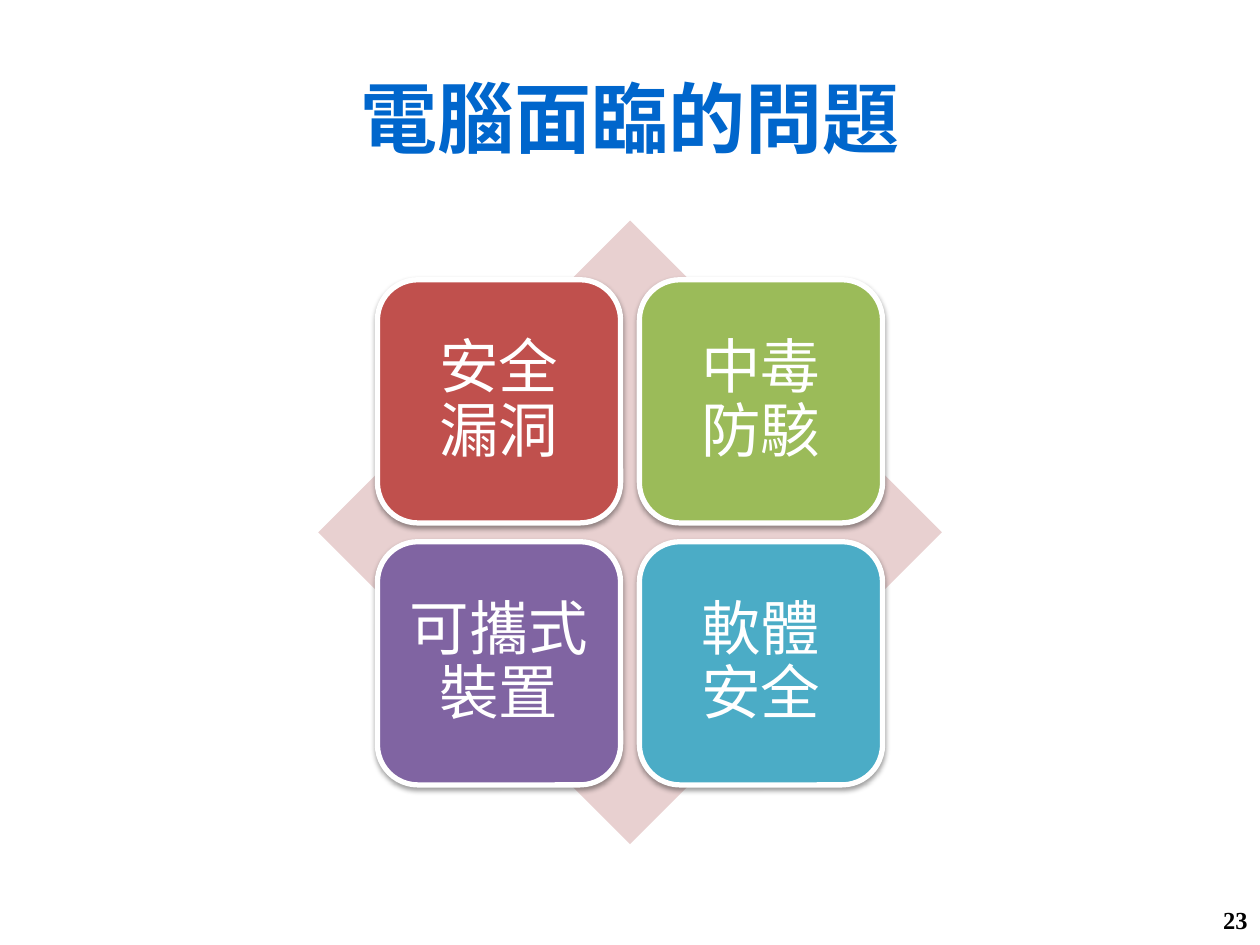
from lxml import etree
from pptx import Presentation
from pptx.dml.color import RGBColor
from pptx.enum import shapes, text
from pptx.oxml import parse_xml
from pptx.oxml.ns import nsdecls, qn
from pptx.util import Pt

FONT = "Times New Roman"
BLUE = RGBColor(0x00, 0x66, 0xCC)
PINK = RGBColor(0xE8, 0xD0, 0xD0)
RED = RGBColor(0xC0, 0x50, 0x4D)
GREEN = RGBColor(0x9B, 0xBB, 0x59)
PURPLE = RGBColor(0x80, 0x64, 0xA2)
TEAL = RGBColor(0x4B, 0xAC, 0xC6)
WHITE = RGBColor(0xFF, 0xFF, 0xFF)
BLACK = RGBColor(0x00, 0x00, 0x00)

PROBLEMS = [
    ("安全 漏洞", RED), ("中毒 防駭", GREEN),
    ("可攜式裝置", PURPLE), ("軟體 安全", TEAL),
]


def write(sp, words, size, color, align, bold=False):
    tf = sp.text_frame
    tf.word_wrap = True
    tf.vertical_anchor = text.MSO_ANCHOR.MIDDLE
    p = tf.paragraphs[0]
    p.text = words
    p.alignment = align
    p.font.name = FONT
    p.font.size = Pt(size)
    p.font.bold = bold
    p.font.color.rgb = color
    return tf


def add_filled(slide, kind, x, y, size, fill):
    sp = slide.shapes.add_shape(kind, Pt(x), Pt(y), Pt(size), Pt(size))
    sp.shadow.inherit = False
    sp.fill.solid()
    sp.fill.fore_color.rgb = fill
    sp.line.fill.background()
    return sp


def add_soft_shadow(sp):
    effects = sp.element.spPr.find(qn("a:effectLst"))
    shadow = parse_xml(
        f'<a:outerShdw {nsdecls("a")} blurRad="{Pt(3.1)}" dist="{Pt(1.6)}" '
        'dir="5400000" rotWithShape="0"/>')
    color = etree.SubElement(shadow, qn("a:srgbClr"), val=str(BLACK))
    etree.SubElement(color, qn("a:alpha"), val="38000")
    effects.append(shadow)


def add_title(slide, words, x, y, w, h):
    sp = slide.shapes.title
    sp.left, sp.top, sp.width, sp.height = Pt(x), Pt(y), Pt(w), Pt(h)
    write(sp, words, 44, BLUE, text.PP_ALIGN.CENTER, bold=True)


def add_tile(slide, words, fill, x, y, size):
    sp = add_filled(slide, shapes.MSO_SHAPE.ROUNDED_RECTANGLE, x, y, size, fill)
    sp.line.color.rgb = WHITE
    sp.line.width = Pt(3)
    add_soft_shadow(sp)
    tf = write(sp, words, 34, WHITE, text.PP_ALIGN.CENTER)
    tf.margin_left = tf.margin_right = tf.margin_top = tf.margin_bottom = Pt(10)
    tf.paragraphs[0].line_spacing = 0.9


def add_matrix(slide, problems, x, y, size):
    """Two by two tiles, centred on a diamond that fills the square box."""
    add_filled(slide, shapes.MSO_SHAPE.DIAMOND, x, y, size, PINK)
    tile = 0.39 * size
    gap = 0.03 * size
    inset = (size - 2 * tile - gap) / 2
    for i, (words, fill) in enumerate(problems):
        row, col = divmod(i, 2)
        add_tile(slide, words, fill, x + inset + col * (tile + gap),
                 y + inset + row * (tile + gap), tile)


def add_page_number(slide, number, x, y, w, h):
    sp = slide.shapes.add_textbox(Pt(x), Pt(y), Pt(w), Pt(h))
    write(sp, number, 14, BLACK, text.PP_ALIGN.RIGHT, bold=True)


def main():
    prs = Presentation()
    prs.slide_width, prs.slide_height = Pt(720), Pt(540)
    slide = prs.slides.add_slide(prs.slide_layouts[5])
    add_title(slide, "電腦面臨的問題", 36, 21.6, 648, 90)
    add_matrix(slide, PROBLEMS, 181.8, 126, 356.4)
    add_page_number(slide, "23", 552, 511.2, 168, 28.8)
    prs.save("out.pptx")


if __name__ == "__main__":
    main()
